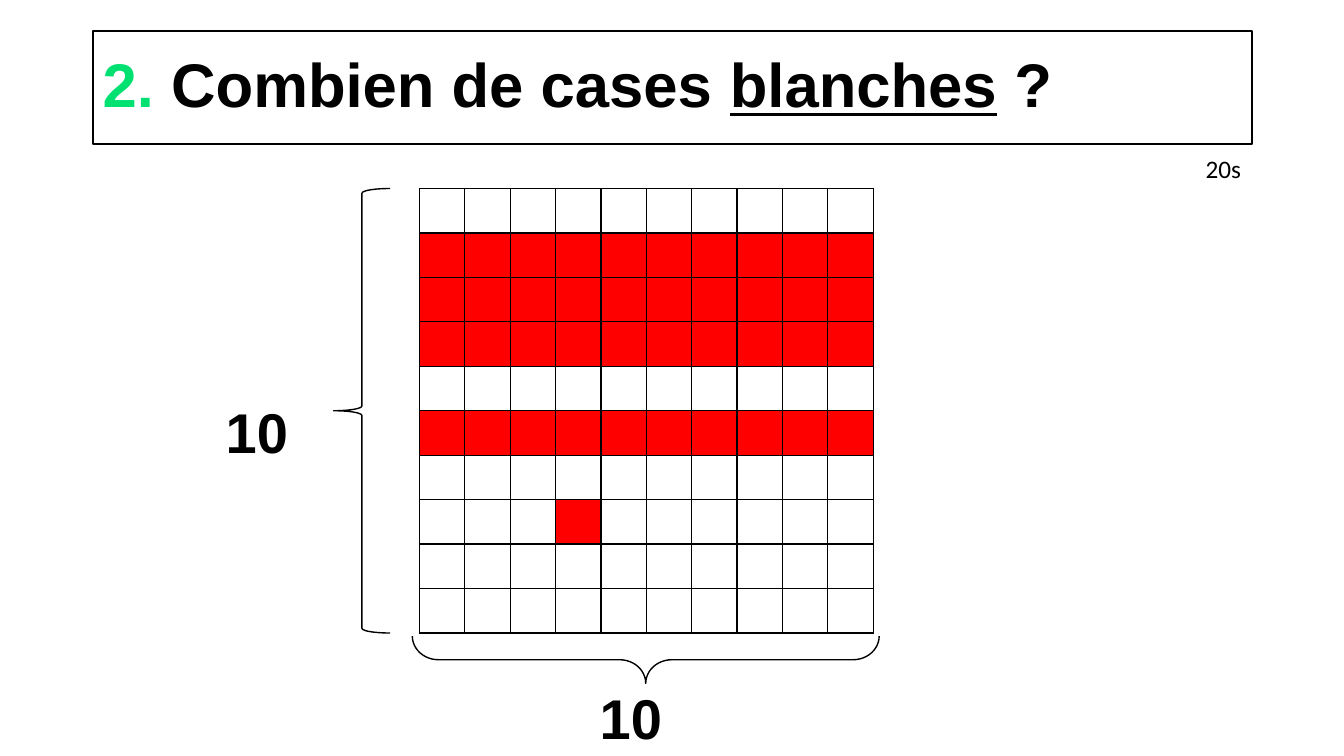
"""Builds a counting question on a ten by ten grid of red and white squares."""
from dataclasses import dataclass

from lxml.etree import SubElement
from pptx import Presentation
from pptx.dml.color import RGBColor
from pptx.enum.shapes import MSO_SHAPE
from pptx.enum.text import MSO_ANCHOR
from pptx.oxml.ns import qn
from pptx.util import Emu, Pt

EMU_PER_PX = 9144
SIDE = 10
RED_ROWS = {1, 2, 3, 5}
RED_SQUARES = {(7, 3)}


@dataclass(frozen=True)
class Theme:
    """Colours, fonts and sizes of the slide."""
    ink: str = "000000"
    accent: str = "00E172"
    red: str = "FF0000"
    heading_font: str = "Arial"
    body_font: str = "Calibri"
    question_size: int = 44
    count_size: int = 40
    timer_size: int = 18
    thin: float = 1
    frame: float = 1.5


THEME = Theme()


def px(length):
    """Turns px into EMU."""
    return Emu(length * EMU_PER_PX)


def colour(code):
    """Turns a hex code into a colour."""
    return RGBColor.from_string(code)


def outline(shape, width):
    """Gives a shape an ink outline."""
    shape.line.color.rgb = colour(THEME.ink)
    shape.line.width = Pt(width)


def set_font(font, name, size, bold):
    """Sets the font in ink colour."""
    font.name, font.size, font.bold = name, Pt(size), bold
    font.color.rgb = colour(THEME.ink)


def add_question(slide, box, number, parts):
    """Adds the framed question; parts pair a text with its underline."""
    question = slide.shapes.add_textbox(*map(px, box))
    outline(question, THEME.frame)
    frame = question.text_frame
    frame.word_wrap = True
    frame.vertical_anchor = MSO_ANCHOR.MIDDLE
    line = frame.paragraphs[0]
    line.line_spacing = 0.9
    set_font(line.font, THEME.heading_font, THEME.question_size, True)
    lead = line.add_run()
    lead.text = number
    lead.font.color.rgb = colour(THEME.accent)
    for wording, underlined in parts:
        run = line.add_run()
        run.text = wording
        run.font.underline = underlined


def add_label(slide, box, wording, font, size, bold=False):
    """Adds a one-line label."""
    frame = slide.shapes.add_textbox(*map(px, box)).text_frame
    frame.word_wrap = False
    line = frame.paragraphs[0]
    line.text = wording
    set_font(line.font, font, size, bold)


def add_brace(slide, box, rotation=0, curl=None):
    """Adds a brace that marks one side of the grid."""
    brace = slide.shapes.add_shape(MSO_SHAPE.LEFT_BRACE, *map(px, box))
    brace.shadow.inherit = False
    brace.fill.background()
    outline(brace, THEME.thin)
    brace.rotation = rotation
    if curl is not None:
        brace.adjustments[0] = curl


def draw_borders(cell):
    """Draws the four borders of a cell, ahead of its fill."""
    properties = cell._tc.get_or_add_tcPr()
    for place, side in enumerate(("a:lnL", "a:lnR", "a:lnT", "a:lnB")):
        border = SubElement(properties, qn(side), w=str(Pt(THEME.thin)))
        fill = SubElement(border, qn("a:solidFill"))
        SubElement(fill, qn("a:srgbClr"), val=THEME.ink)
        properties.insert(place, border)


def add_grid(slide, box):
    """Adds the square grid with its red squares."""
    grid = slide.shapes.add_table(SIDE, SIDE, *map(px, box)).table
    grid.first_row = grid.horz_banding = False
    for row in range(SIDE):
        for column in range(SIDE):
            square = grid.cell(row, column)
            if row in RED_ROWS or (row, column) in RED_SQUARES:
                square.fill.solid()
                square.fill.fore_color.rgb = colour(THEME.red)
            else:
                square.fill.background()
            draw_borders(square)


def main():
    """Builds and saves the slide."""
    deck = Presentation()
    deck.slide_width, deck.slide_height = px(1333), px(750)
    slide = deck.slides.add_slide(deck.slide_layouts[6])
    add_grid(slide, (416, 187, 450, 441))
    add_question(slide, (92, 31, 1150, 112), "2. ", [
        ("Combien de cases ", False), ("blanches", True), (" ?", False)])
    add_brace(slide, (331, 187, 56, 441))
    add_brace(slide, (617, 423, 47, 463), rotation=270, curl=0.55)
    for left, top in ((214, 389), (585, 673)):
        add_label(slide, (left, top, 83, 77), str(SIDE),
                  THEME.heading_font, THEME.count_size, bold=True)
    add_label(slide, (1186, 147, 56, 40), "20s",
              THEME.body_font, THEME.timer_size)
    deck.save("out.pptx")


if __name__ == "__main__":
    main()
